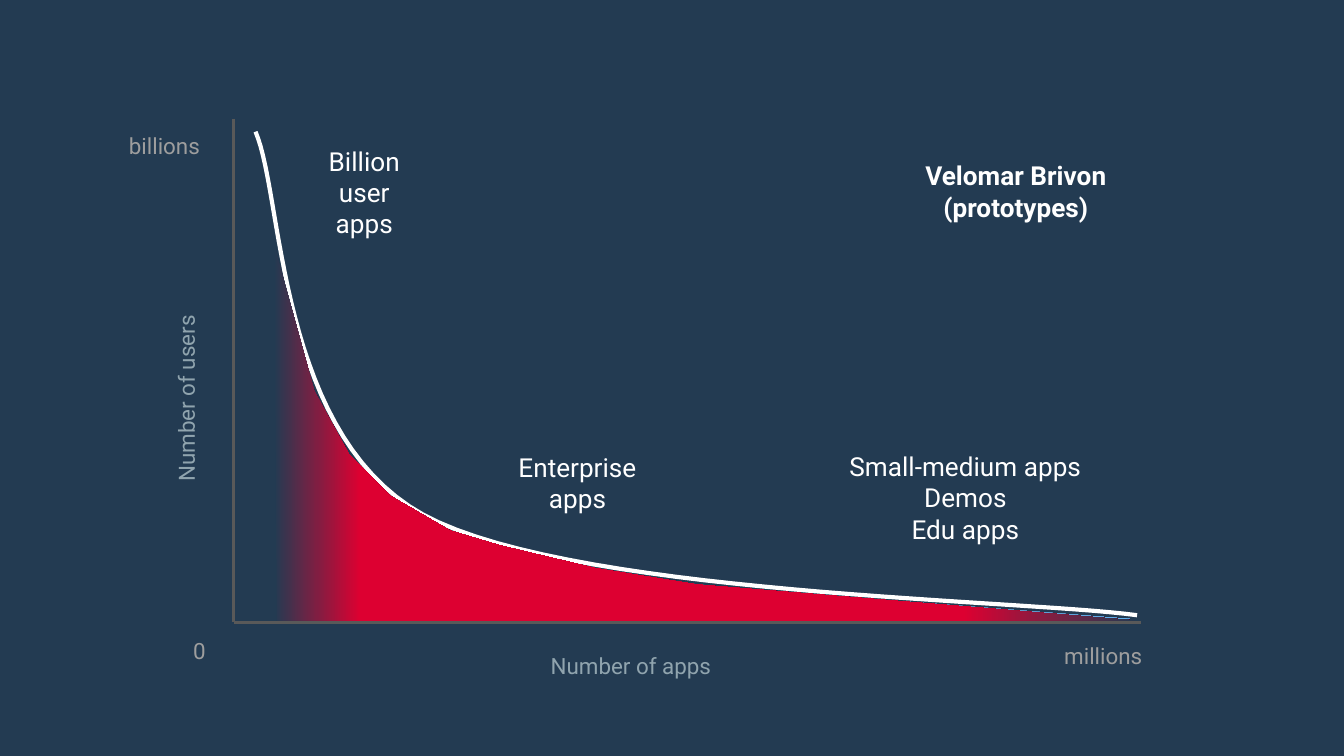
from dataclasses import dataclass

from lxml import etree
from pptx import Presentation
from pptx.dml.color import RGBColor
from pptx.enum.shapes import MSO_CONNECTOR
from pptx.enum.text import MSO_ANCHOR, PP_ALIGN
from pptx.oxml.ns import qn
from pptx.util import Cm, Pt

STRAIGHT = MSO_CONNECTOR.STRAIGHT
CENTER, RIGHT = PP_ALIGN.CENTER, PP_ALIGN.RIGHT
TOP, MIDDLE = MSO_ANCHOR.TOP, MSO_ANCHOR.MIDDLE

Point = tuple[float, float]
Stops = list[tuple[int, str]]


@dataclass(frozen=True)
class Theme:
    font: str = "Roboto"
    background: str = "233B52"
    axis: str = "595959"
    white: str = "FFFFFF"
    scale_text: str = "9E9E9E"
    title_text: str = "90A4AE"
    red: str = "DD0031"
    dark_red: str = "801E42"
    slate: str = "525E69"
    sky: str = "64B5F6"
    small: int = 12
    large: int = 14
    axis_width: float = 1.5
    curve_width: float = 2.25


THEME = Theme()


@dataclass(frozen=True)
class Style:
    size: int
    color: str
    align: PP_ALIGN = CENTER
    anchor: MSO_ANCHOR = TOP
    bold: bool = False


SCALE = Style(THEME.small, THEME.scale_text, align=RIGHT)
AXIS_TITLE = Style(THEME.small, THEME.title_text, anchor=MIDDLE)
SEGMENT = Style(THEME.large, THEME.white)
HEADLINE = Style(THEME.large, THEME.white, bold=True)


@dataclass(frozen=True)
class Label:
    lines: tuple[str, ...]
    left: float
    top: float
    width: float
    height: float
    style: Style
    rotation: int = 0


# Geometry in centimetres
ORIGIN = (4.42, 11.76)
AXIS_ENDS = [(4.42, 2.24), (21.56, 11.76)]
CURVE_START = (4.83, 2.49)
CURVE_BEZIERS = [
    [(5.36, 3.71), (5.23, 8.2), (8.0, 9.73)],
    [(10.8, 11.25), (19.25, 11.33), (21.49, 11.63)],
]
STEPS = 30
TAIL_AREA = [(11.56, 10.82), (11.56, 11.71), (21.46, 11.71),
             (15.54, 11.25), (13.21, 11.05)]
MAIN_AREA = [(5.18, 4.62), (5.23, 11.73), (21.46, 11.73), (13.18, 11.05),
             (11.25, 10.74), (9.45, 10.31), (8.51, 10.03), (7.37, 9.37),
             (6.6, 8.59), (5.94, 7.39)]
TAIL_STOPS = [(0, THEME.background), (20, THEME.slate), (100, THEME.sky)]
MAIN_STOPS = [(0, THEME.background), (5, THEME.dark_red), (10, THEME.red),
              (80, THEME.red), (90, THEME.dark_red), (100, THEME.background)]

LABELS = [
    Label(("billions",), 1.9, 2.24, 2.13, 1.04, SCALE),
    Label(("0",), 2.64, 11.79, 1.5, 1.04, SCALE),
    Label(("millions",), 19.71, 11.89, 2.13, 1.04, SCALE),
    Label(("Number of users",), 0.38, 7.01, 6.27, 1.04, AXIS_TITLE, 270),
    Label(("Number of apps",), 8.79, 12.07, 6.27, 1.04, AXIS_TITLE),
    Label(("Billion user apps",), 5.82, 2.49, 2.13, 1.98, SEGMENT),
    Label(("Enterprise", "apps"), 8.92, 8.28, 3.99, 1.04, SEGMENT),
    Label(("Small-medium apps", "Demos", "Edu apps"),
          14.78, 8.26, 6.93, 2.9, SEGMENT),
    Label(("Velomar Brivon", "(prototypes)"), 17.04, 2.77, 4.32, 1.98, HEADLINE),
]


def rgb(value: str) -> RGBColor:
    return RGBColor.from_string(value)


def apply(target, formats: dict) -> None:
    for name, value in formats.items():
        setattr(target, name, value)


def set_line(line, color: str, width: float) -> None:
    line.color.rgb = rgb(color)
    line.width = Pt(width)


def draw_axis(shapes, end: Point) -> None:
    axis = shapes.add_connector(STRAIGHT, *map(Cm, end), *map(Cm, ORIGIN))
    set_line(axis.line, THEME.axis, THEME.axis_width)
    etree.SubElement(axis._element.spPr, qn("a:effectLst"))


def bezier_points(start: Point, controls: list[Point]) -> list[Point]:
    """Sample a cubic curve, leaving out its start."""
    corners = [start, *controls]
    points = []
    for step in range(1, STEPS + 1):
        t = step / STEPS
        weights = ((1 - t) ** 3, 3 * t * (1 - t) ** 2, 3 * t * t * (1 - t), t ** 3)
        points.append(tuple(sum(w * c[axis] for w, c in zip(weights, corners))
                            for axis in (0, 1)))
    return points


def draw_outline(shapes, points: list[Point], close: bool):
    first, *rest = [(Cm(x), Cm(y)) for x, y in points]
    builder = shapes.build_freeform(*first)
    builder.add_line_segments(rest, close=close)
    outline = builder.convert_to_shape()
    outline.shadow.inherit = False
    return outline


def draw_curve(shapes) -> None:
    points = [CURVE_START]
    for controls in CURVE_BEZIERS:
        points += bezier_points(points[-1], controls)
    curve = draw_outline(shapes, points, close=False)
    curve.fill.background()
    set_line(curve.line, THEME.white, THEME.curve_width)


def draw_area(shapes, points: list[Point], stops: Stops) -> None:
    area = draw_outline(shapes, points, close=True)
    area.line.fill.background()
    area.fill.gradient()
    area.fill.gradient_angle = 0
    stop_list = area._element.spPr.find(f".//{qn('a:gsLst')}")
    for old_stop in list(stop_list):
        stop_list.remove(old_stop)
    for percent, color in stops:
        stop = etree.SubElement(stop_list, qn("a:gs"), pos=str(percent * 1000))
        etree.SubElement(stop, qn("a:srgbClr"), val=color)


def draw_label(shapes, label: Label) -> None:
    box = shapes.add_textbox(Cm(label.left), Cm(label.top),
                             Cm(label.width), Cm(label.height))
    box.rotation = label.rotation
    style, frame = label.style, box.text_frame
    margins = {f"margin_{side}": Cm(0.25)
               for side in ("left", "top", "right", "bottom")}
    apply(frame, {"word_wrap": True, "vertical_anchor": style.anchor, **margins})
    frame.text = "\n".join(label.lines)
    for paragraph in frame.paragraphs:
        paragraph.alignment = style.align
        font = paragraph.runs[0].font
        apply(font, {"name": THEME.font, "size": Pt(style.size), "bold": style.bold})
        font.color.rgb = rgb(style.color)


def main() -> None:
    deck = Presentation()
    apply(deck, {"slide_width": Cm(25.4), "slide_height": Cm(14.29)})
    slide = deck.slides.add_slide(deck.slide_layouts[6])
    slide.background.fill.solid()
    slide.background.fill.fore_color.rgb = rgb(THEME.background)
    shapes = slide.shapes

    # Axes and curve
    for end in AXIS_ENDS:
        draw_axis(shapes, end)
    draw_curve(shapes)

    # Shaded areas under the curve
    draw_area(shapes, TAIL_AREA, TAIL_STOPS)
    draw_area(shapes, MAIN_AREA, MAIN_STOPS)

    # Labels
    for label in LABELS:
        draw_label(shapes, label)

    deck.save("out.pptx")


if __name__ == "__main__":
    main()
